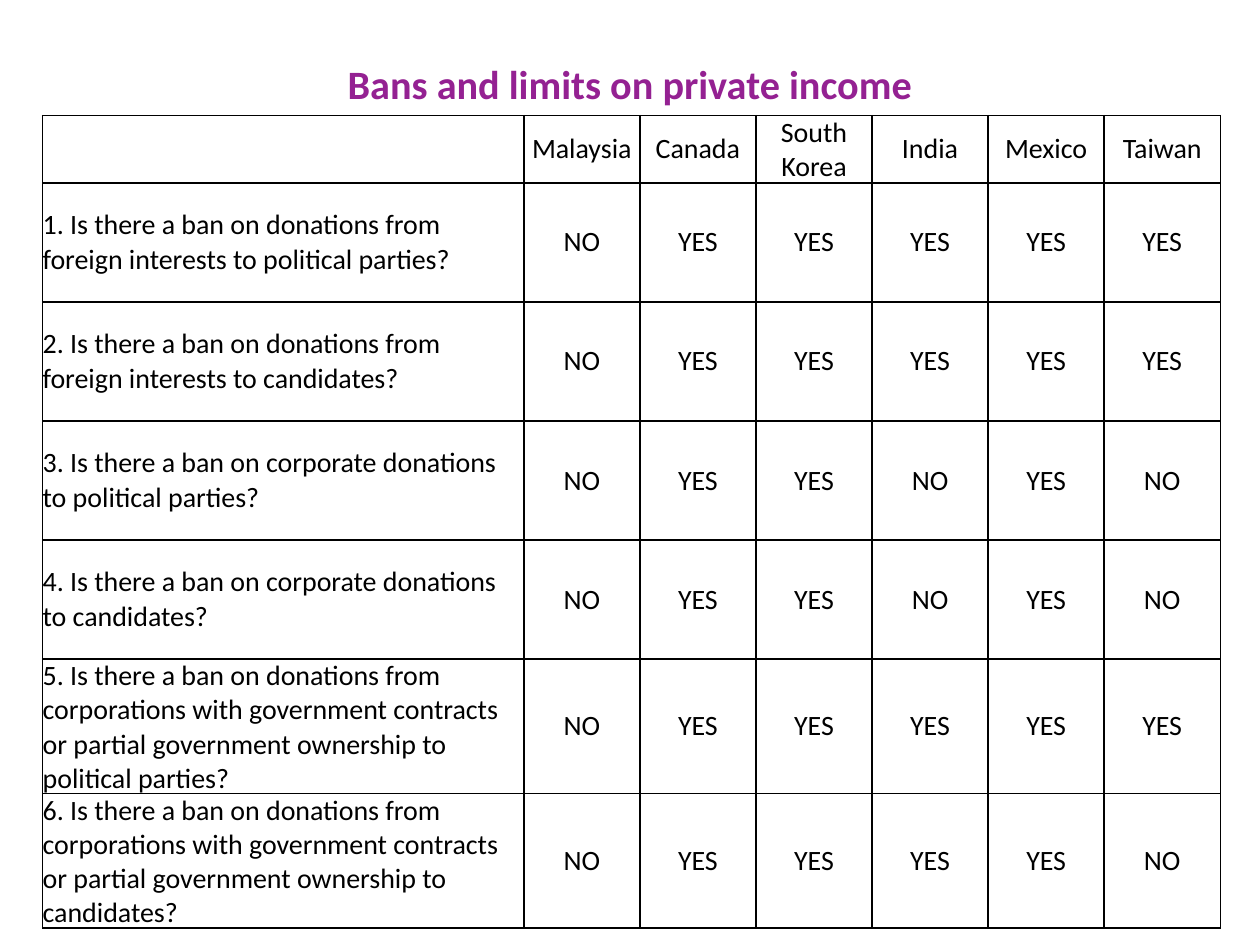
import pptx
import pptx.dml.color
import pptx.enum.text
import pptx.oxml
import pptx.oxml.ns
import pptx.util
from pptx.util import Cm

COLORS = {"title": "942192", "text": "000000", "border": "000000"}
FONT = "Calibri"
COUNTRIES = ["Malaysia", "Canada", "South Korea", "India", "Mexico", "Taiwan"]
BANS = [
    ("1. Is there a ban on donations from foreign interests to political parties?",
     "NO YES YES YES YES YES"),
    ("2. Is there a ban on donations from foreign interests to candidates?",
     "NO YES YES YES YES YES"),
    ("3. Is there a ban on corporate donations to political parties?",
     "NO YES YES NO YES NO"),
    ("4. Is there a ban on corporate donations to candidates?",
     "NO YES YES NO YES NO"),
    ("5. Is there a ban on donations from corporations with government contracts "
     "or partial government ownership to political parties?",
     "NO YES YES YES YES YES"),
    ("6. Is there a ban on donations from corporations with government contracts "
     "or partial government ownership to candidates?",
     "NO YES YES YES YES NO"),
]


def style_text(paragraph, size, color, centered, bold=False):
    align = pptx.enum.text.PP_ALIGN
    paragraph.alignment = align.CENTER if centered else align.LEFT
    for run in paragraph.runs:
        run.font.name = FONT
        run.font.size = pptx.util.Pt(size)
        run.font.bold = bold
        run.font.color.rgb = pptx.dml.color.RGBColor.from_string(COLORS[color])


def add_title(slide, text):
    title = slide.shapes.add_textbox(Cm(1.75), Cm(1.04), Cm(21.92), Cm(1.27))
    frame = title.text_frame
    frame.word_wrap = True
    frame.vertical_anchor = pptx.enum.text.MSO_ANCHOR.MIDDLE
    frame.text = text
    style_text(frame.paragraphs[0], 23, "title", True, bold=True)


def add_borders(cell):
    properties = cell._tc.get_or_add_tcPr()
    for position, side in enumerate(("lnL", "lnR", "lnT", "lnB")):
        border = pptx.oxml.parse_xml(
            f'<a:{side} {pptx.oxml.ns.nsdecls("a")} w="12700"><a:solidFill>'
            f'<a:srgbClr val="{COLORS["border"]}"/></a:solidFill></a:{side}>')
        properties.insert(position, border)


def fill_cell(cell, text, centered):
    cell.text = text
    cell.margin_left = cell.margin_right = cell.margin_top = cell.margin_bottom = 0
    cell.vertical_anchor = pptx.enum.text.MSO_ANCHOR.MIDDLE
    cell.fill.background()
    add_borders(cell)
    style_text(cell.text_frame.paragraphs[0], 16, "text", centered)


def add_ban_table(slide):
    entries = [["", *COUNTRIES]]
    entries += [[question, *answers.split()] for question, answers in BANS]
    widths = [Cm(9.7)] + [Cm(2.34)] * len(COUNTRIES)
    heights = [Cm(1)] + [Cm(2.4)] * len(BANS)
    table = slide.shapes.add_table(len(heights), len(widths), Cm(0.86), Cm(2.33),
                                   sum(widths), sum(heights)).table
    table.first_row = False
    table.horz_banding = False
    for column, width in zip(table.columns, widths):
        column.width = width
    for row, height, texts in zip(table.rows, heights, entries):
        row.height = height
        for index, (cell, text) in enumerate(zip(row.cells, texts)):
            fill_cell(cell, text, centered=index > 0)


def main():
    presentation = pptx.Presentation()
    presentation.slide_width = Cm(25.4)
    presentation.slide_height = Cm(19.05)
    slide = presentation.slides.add_slide(presentation.slide_layouts[6])
    add_title(slide, "Bans and limits on private income")
    add_ban_table(slide)
    presentation.save("out.pptx")


if __name__ == "__main__":
    main()
